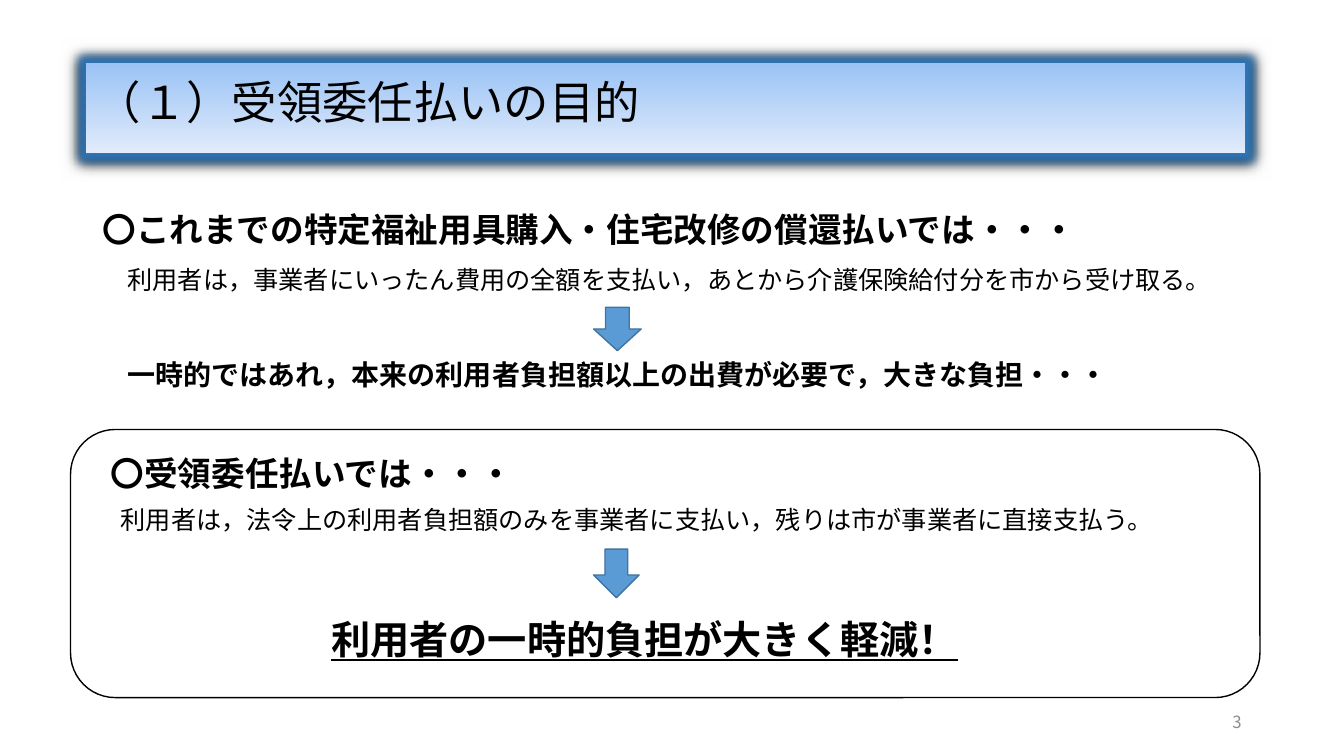
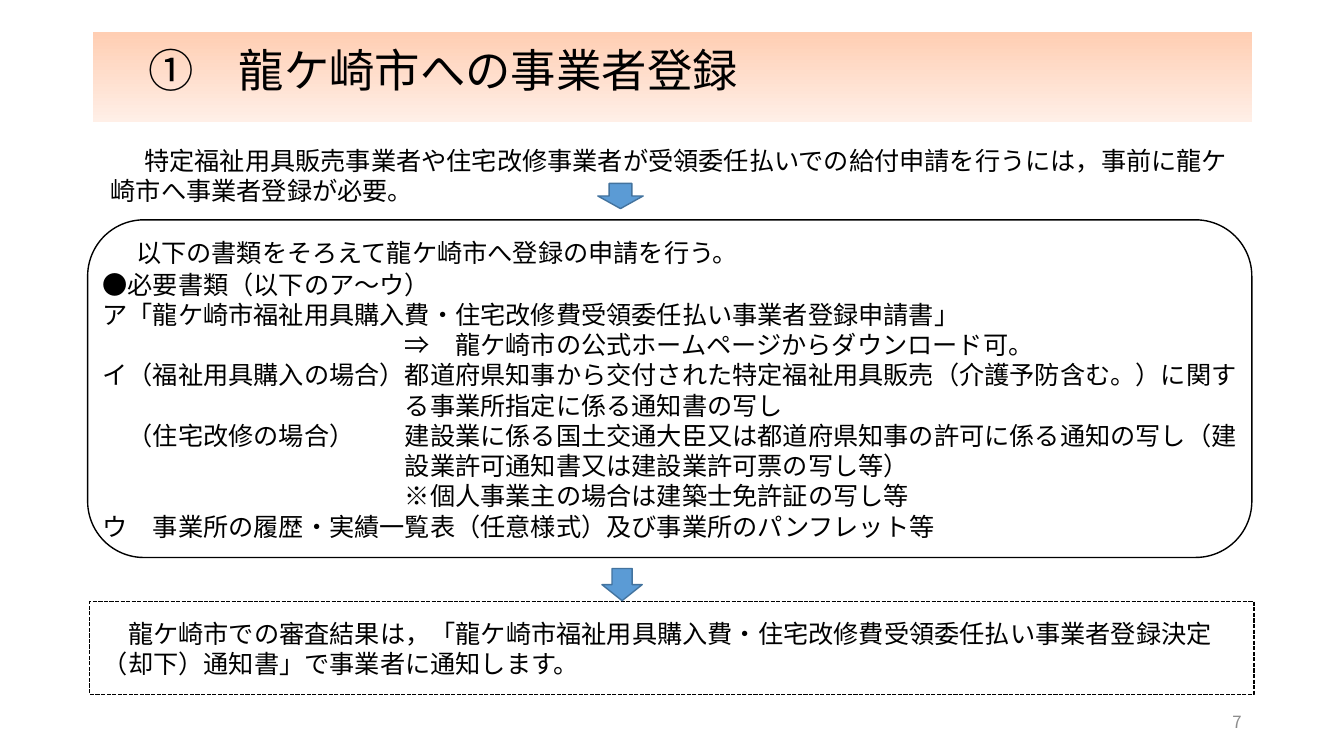
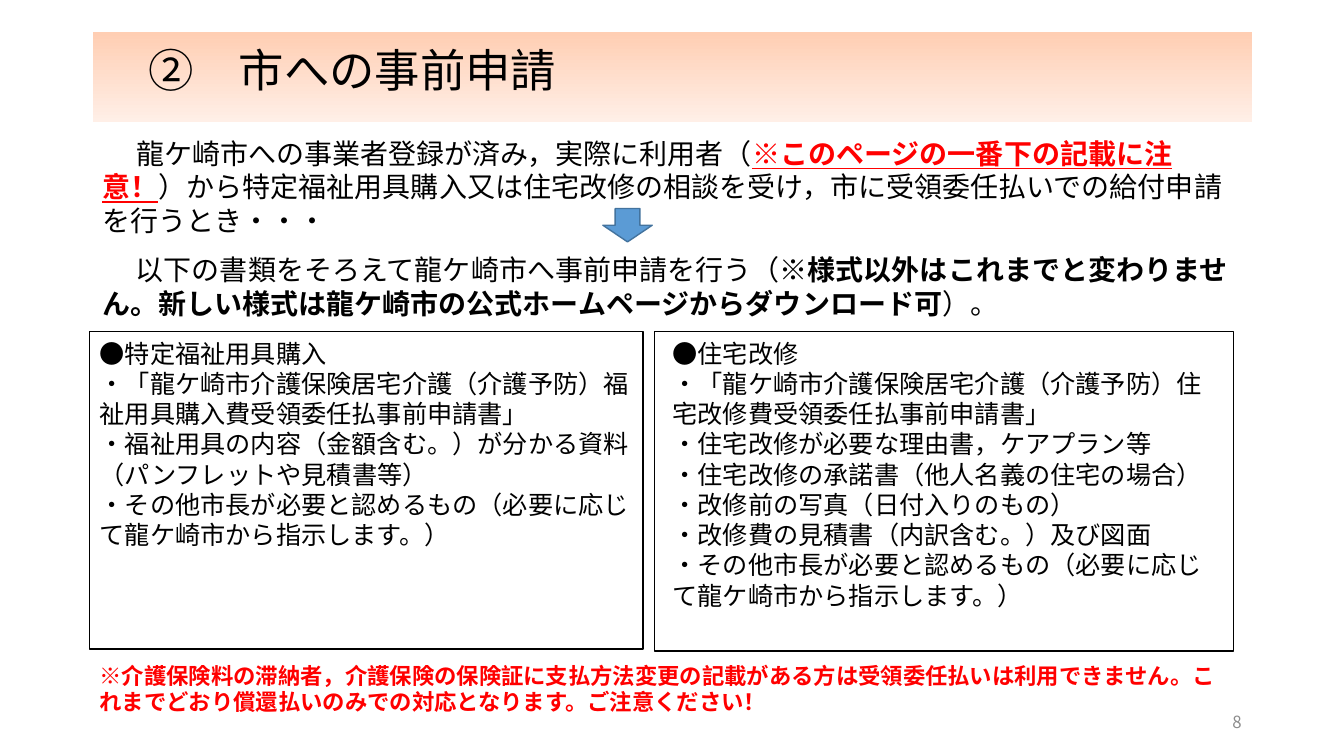
"""Builds three slides on direct payment of care insurance benefits to providers."""
import lxml.etree
import pptx
import pptx.dml.color
import pptx.enum.dml
import pptx.enum.shapes
import pptx.enum.text
import pptx.oxml.ns
import pptx.util

Pt = pptx.util.Pt
qn = pptx.oxml.ns.qn
SHAPE = pptx.enum.shapes.MSO_SHAPE
ANCHOR = pptx.enum.text.MSO_ANCHOR
ALIGN = pptx.enum.text.PP_ALIGN
FONT = "Noto Sans CJK JP"
COLORS = {
    "black": "000000", "red": "FF0000", "gray": "8C8C8C",
    "arrow": "5B9BD5", "arrow_line": "43739E", "glow": "2E75B6",
    "blue_top": "9AC3F5", "blue_end": "E1EBFB",
    "orange_top": "FFCEB3", "orange_end": "FFEFE7",
}
LINE_RATIO = 1.2
HANG = 216

PAGES = [
    {
        "title": "（１）受領委任払いの目的", "band": "blue", "band_at": (61.2, 45.2), "number": "3",
        "title_indent": 0, "glow": True,
        "texts": [
            {"at": (66, 132.5, 828, 49), "size": 24, "body": True, "anchor": ANCHOR.BOTTOM,
             "paras": [{"runs": [("これまで", "b")]}]},
            {"at": (66, 184.3, 828, 29), "size": 18, "paras": [
                {"first": 18, "runs": [("利用者は，事業者にいったん費用の全額を支払い，あとから介護保険給付分を市から受け取る。", "")]}]},
            {"at": (66, 250.6, 828, 32), "size": 20, "paras": [
                {"first": 18, "runs": [("一時的ではあれ，本来の利用者負担額以上の出費が必要で，大きな負担・・・", "b")]}]},
            {"at": (72, 319, 828, 36), "size": 24, "paras": [{"runs": [("〇受領委任払いでは・・・", "b")]}]},
            {"at": (61.2, 355.7, 828, 29), "size": 18, "paras": [
                {"first": 18, "runs": [("利用者は，法令上の利用者負担額のみを事業者に支払い，残りは市が事業者に直接支払う。", "")]}]},
            {"at": (50.4, 434.9, 820, 41), "size": 28, "align": ALIGN.CENTER,
             "paras": [{"runs": [("利用者の一時的負担が大きく軽減！", "bu")]}]},
        ],
        "arrows": [(424, 219.5, 34, 31), (424, 392.3, 32.5, 34.7)],
        "frames": [(50.4, 306.8, 849.6, 191.5)],
    },
    {
        "title": "①　龍ケ崎市への事業者登録", "band": "orange", "band_at": (66.2, 23), "number": "7",
        "title_indent": 32.4, "glow": False,
        "texts": [
            {"at": (72, 98.9, 828, 52), "size": 18, "paras": [
                {"first": 24, "runs": [("特定福祉用具販売事業者や住宅改修事業者が受領委任払いでの給付申請を行うには，事前に龍ケ崎市へ事業者登録が必要。", "")]}]},
            {"at": (66, 165, 828, 248), "size": 18, "body": True, "paras": [
                {"first": 24, "after": 1, "runs": [("以下の書類をそろえて龍ケ崎市へ登録の申請を行う。", "")]},
                {"runs": [("●必要書類（以下のア～ウ）", "")]},
                {"runs": [("ア「龍ケ崎市福祉用具購入費・住宅改修費受領委任払い事業者登録申請書」", "")]},
                {"left": HANG, "runs": [("⇒　龍ケ崎市の公式ホームページからダウンロード可。", "")]},
                {"left": HANG, "first": -HANG, "runs": [("イ（福祉用具購入の場合）都道府県知事から交付された特定福祉用具販売（介護予防含む。）に関する事業所指定に係る通知書の写し", "")]},
                {"left": HANG, "first": 18 - HANG, "runs": [("（住宅改修の場合）\t建設業に係る国土交通大臣又は都道府県知事の許可に係る通知の写し（建設業許可通知書又は建設業許可票の写し等）", "")]},
                {"left": HANG, "runs": [("※個人事業主の場合は建築士免許証の写し等", "")]},
                {"runs": [("ウ　事業所の履歴・実績一覧表（任意様式）及び事業所のパンフレット等", "")]},
            ]},
            {"at": (64.1, 429.8, 831.6, 66.2), "size": 18, "outline": "dash", "anchor": ANCHOR.MIDDLE,
             "insets": (9.4, 18), "paras": [
                 {"first": 18, "runs": [("龍ケ崎市での審査結果は，「龍ケ崎市福祉用具購入費・住宅改修費受領委任払い事業者登録決定（却下）通知書」で事業者に通知します。", "")]}]},
        ],
        "arrows": [(427, 131, 32.4, 18), (430, 406.1, 28.8, 23)],
        "frames": [(62.6, 157, 831.6, 241.2)],
    },
    {
        "title": "②　市への事前申請", "band": "orange", "band_at": (66.2, 23), "number": "8",
        "title_indent": 32.4, "glow": False,
        "texts": [
            {"at": (66, 92.6, 828, 81), "size": 20, "body": True, "paras": [
                {"first": 24, "runs": [
                    ("龍ケ崎市への事業者登録が済み，実際に利用者（", ""),
                    ("※このページの一番下の記載に注意！", "bur"),
                    ("）から特定福祉用具購入又は住宅改修の相談を受け，市に受領委任払いでの給付申請を行うとき・・・", "")]}]},
            {"at": (66, 176, 828, 57), "size": 20, "paras": [
                {"first": 24, "runs": [
                    ("以下の書類をそろえて龍ケ崎市へ事前申請を行う（", ""),
                    ("※様式以外はこれまでと変わりません。新しい様式は龍ケ崎市の公式ホームページからダウンロード可", "b"),
                    ("）。", "")]}]},
            {"at": (64.1, 236.9, 395.3, 226.8), "size": 18, "outline": "solid", "paras": [
                {"runs": [(line, "")]} for line in (
                    "●特定福祉用具購入",
                    "・「龍ケ崎市介護保険居宅介護（介護予防）福祉用具購入費受領委任払事前申請書」",
                    "・福祉用具の内容（金額含む。）が分かる資料（パンフレットや見積書等）",
                    "・その他市長が必要と認めるもの（必要に応じて龍ケ崎市から指示します。）")]},
            {"at": (467.3, 236.9, 414, 228.2), "size": 18, "outline": "solid", "insets": (13, 7.2), "paras": [
                {"runs": [(line, "")]} for line in (
                    "●住宅改修",
                    "・「龍ケ崎市介護保険居宅介護（介護予防）住宅改修費受領委任払事前申請書」",
                    "・住宅改修が必要な理由書，ケアプラン等",
                    "・住宅改修の承諾書（他人名義の住宅の場合）",
                    "・改修前の写真（日付入りのもの）",
                    "・改修費の見積書（内訳含む。）及び図面",
                    "・その他市長が必要と認めるもの（必要に応じて龍ケ崎市から指示します。）")]},
            {"at": (64.1, 468, 817.2, 46), "size": 16, "paras": [
                {"runs": [
                    ("※", "r"),
                    ("介護保険料の滞納者，介護保険の保険証に支払方法変更の記載がある方は受領委任払いは利用できません。これまでどおり償還払いのみでの対応となります。ご注意ください！", "br")]}]},
        ],
        "arrows": [(430.6, 149, 35.3, 23.8)],
        "frames": [],
    },
]
PAGES[0]["texts"][0]["paras"][0]["runs"] = [("〇これまでの特定福祉用具購入・住宅改修の償還払いでは・・・", "b")]


def rgb(name):
    return pptx.dml.color.RGBColor.from_string(COLORS[name])


def place(shape, at):
    shape.left, shape.top, shape.width, shape.height = (Pt(value) for value in at)


def add_span(para, text, size, color, marks=""):
    span = para.add_run()
    span.text = text
    font = span.font
    font.size = Pt(size)
    font.bold = "b" in marks
    font.underline = "u" in marks
    font.color.rgb = rgb("red" if "r" in marks else color)
    font.name = FONT
    lxml.etree.SubElement(span._r.get_or_add_rPr(), qn("a:ea"), typeface=FONT)


def fill_text(box, paras, size, color="black", align=ALIGN.LEFT, anchor=ANCHOR.TOP,
              insets=(7.2, 7.2), vertical=(4.6, 3.6), spacing=None):
    frame = box.text_frame
    frame.word_wrap = True
    frame.auto_size = pptx.enum.text.MSO_AUTO_SIZE.NONE
    frame.vertical_anchor = anchor
    frame.margin_left, frame.margin_right = (Pt(value) for value in insets)
    frame.margin_top, frame.margin_bottom = (Pt(value) for value in vertical)
    for index, item in enumerate(paras):
        para = frame.add_paragraph() if index else frame.paragraphs[0]
        para.alignment = align
        para.line_spacing = spacing or Pt(size * LINE_RATIO)
        para.space_before = Pt(0)
        para.space_after = Pt(item.get("after", 0))
        props = para._p.get_or_add_pPr()
        props.set("marL", str(Pt(item.get("left", 0))))
        props.set("indent", str(Pt(item.get("first", 0))))
        lxml.etree.SubElement(props, qn("a:buNone"))
        for text, marks in item["runs"]:
            add_span(para, text, size, color, marks)


def draw_outline(shape, style="solid"):
    shape.line.color.rgb = rgb("black")
    shape.line.width = Pt(1)
    if style == "dash":
        shape.line.dash_style = pptx.enum.dml.MSO_LINE.SQUARE_DOT


def add_glow(shape):
    effects = lxml.etree.SubElement(shape._element.spPr, qn("a:effectLst"))
    glow = lxml.etree.SubElement(effects, qn("a:glow"), rad=str(Pt(11)))
    shadow = lxml.etree.SubElement(effects, qn("a:outerShdw"), blurRad=str(Pt(8.5)),
                                   dist=str(Pt(1)), dir="5400000")
    for effect, name in ((glow, "glow"), (shadow, "black")):
        lxml.etree.SubElement(effect, qn("a:srgbClr"), val=COLORS[name])


def add_title(page, content):
    title = page.shapes.title
    place(title, (*content["band_at"], 828, 64.1))
    title.fill.gradient()
    title.fill.gradient_angle = 270
    for stop, part in zip(title.fill.gradient_stops, ("top", "end")):
        stop.color.rgb = rgb(f"{content['band']}_{part}")
    if content["glow"]:
        add_glow(title)
    heading = {"first": content["title_indent"], "runs": [(content["title"], "")]}
    fill_text(title, [heading], 32.4, anchor=ANCHOR.MIDDLE, vertical=(3.6, 9), spacing=0.9)


def add_text(page, item):
    box = page.placeholders[1] if item.get("body") else page.shapes.add_textbox(0, 0, 0, 0)
    place(box, item["at"])
    options = {key: item[key] for key in ("align", "anchor", "insets") if key in item}
    fill_text(box, item["paras"], item["size"], **options)
    if "outline" in item:
        draw_outline(box, item["outline"])


def add_plain_shape(page, kind, at):
    shape = page.shapes.add_shape(kind, *(Pt(value) for value in at))
    shape.shadow.inherit = False
    return shape


def build_page(deck, content):
    page = deck.slides.add_slide(deck.slide_layouts[1])
    add_title(page, content)
    for item in content["texts"]:
        add_text(page, item)
    for at in content["arrows"]:
        arrow = add_plain_shape(page, SHAPE.DOWN_ARROW, at)
        arrow.fill.solid()
        arrow.fill.fore_color.rgb = rgb("arrow")
        arrow.line.color.rgb = rgb("arrow_line")
        arrow.line.width = Pt(1)
    for at in content["frames"]:
        frame = add_plain_shape(page, SHAPE.ROUNDED_RECTANGLE, at)
        frame.fill.background()
        draw_outline(frame)
    number = page.shapes.add_textbox(0, 0, 0, 0)
    place(number, (678, 500.5, 216, 28.8))
    fill_text(number, [{"runs": [(content["number"], "")]}], 12, "gray", ALIGN.RIGHT, ANCHOR.MIDDLE)


def main():
    deck = pptx.Presentation()
    deck.slide_width, deck.slide_height = Pt(960), Pt(540)
    for content in PAGES:
        build_page(deck, content)
    deck.save("out.pptx")


if __name__ == "__main__":
    main()
